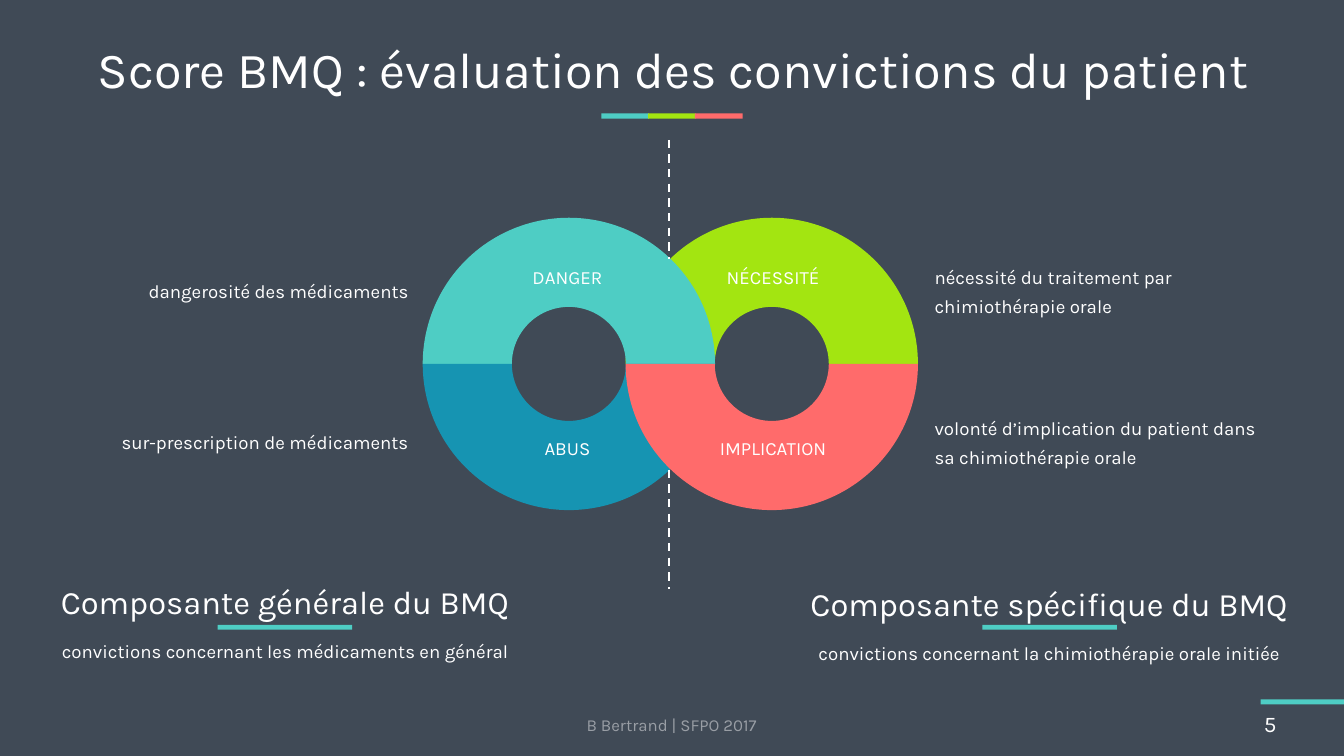
import pptx
import pptx.dml.color
import pptx.enum.dml
import pptx.enum.shapes
import pptx.enum.text
import pptx.oxml.ns
import pptx.util
from lxml import etree

Pt = pptx.util.Pt
SHAPES = pptx.enum.shapes.MSO_SHAPE
ALIGN = pptx.enum.text.PP_ALIGN
ANCHOR = pptx.enum.text.MSO_ANCHOR

FONT = "Karla"
COLORS = {
    "background": "404A56",
    "white": "FFFFFF",
    "grey": "999EA5",
    "teal": "4ECDC4",
    "lime": "A3E511",
    "coral": "FF6B6B",
    "blue": "1694B2",
}
RING_SIZE = 313.2
RING_TOP = 233.3
RING_LEFTS = (452.9, 670.3)


def rgb(color):
    return pptx.dml.color.RGBColor.from_string(COLORS[color])


def add_filled(slide, preset, left, top, width, height, color):
    shape = slide.shapes.add_shape(preset, Pt(left), Pt(top), Pt(width), Pt(height))
    shape.shadow.inherit = False
    shape.fill.solid()
    shape.fill.fore_color.rgb = rgb(color)
    shape.line.fill.background()
    return shape


def add_bar(slide, left, top, width, color="teal", height=5.4):
    add_filled(slide, SHAPES.RECTANGLE, left, top, width, height, color)


def add_half_ring(slide, left, color, rotation):
    half_ring = add_filled(slide, SHAPES.BLOCK_ARC, left, RING_TOP,
                           RING_SIZE, RING_SIZE, color)
    for index, value in enumerate((108, 0, 0.305)):
        half_ring.adjustments[index] = value
    half_ring.rotation = rotation


def add_text(slide, left, top, width, height, lines, align=ALIGN.LEFT,
             anchor=ANCHOR.MIDDLE, spacing=1.0, color="white", gap=0):
    box = slide.shapes.add_textbox(Pt(left), Pt(top), Pt(width), Pt(height))
    frame = box.text_frame
    frame.word_wrap = True
    frame.vertical_anchor = anchor
    for index, (words, size) in enumerate(lines):
        paragraph = frame.add_paragraph() if index else frame.paragraphs[0]
        paragraph.alignment = align
        paragraph.line_spacing = spacing
        paragraph.space_after = Pt(gap if index < len(lines) - 1 else 0)
        run = paragraph.add_run()
        run.text = words
        run.font.name = FONT
        run.font.size = Pt(size)
        run.font.color.rgb = rgb(color)


def add_divider(slide, x, top, bottom):
    divider = slide.shapes.add_connector(
        pptx.enum.shapes.MSO_CONNECTOR.STRAIGHT, Pt(x), Pt(top), Pt(x), Pt(bottom))
    divider.line.color.rgb = rgb("white")
    divider.line.width = Pt(2.25)
    divider.line.dash_style = pptx.enum.dml.MSO_LINE.DASH
    properties = divider.element.find(pptx.oxml.ns.qn("p:spPr"))
    etree.SubElement(properties, pptx.oxml.ns.qn("a:effectLst"))


def add_header_and_footer(slide):
    for index, color in enumerate(("teal", "lime", "coral")):
        add_bar(slide, 644.2 + index * 50.2, 121.6, 51, color)
    add_bar(slide, 1350.8, 749.3, 89.2)
    add_text(slide, 38.9, 27.4, 1365.1, 100.8,
             [("Score BMQ : évaluation des convictions du patient", 54)],
             ALIGN.CENTER, spacing=0.9)
    add_text(slide, 476.6, 754.6, 486, 43.2, [("B Bertrand | SFPO 2017", 18)],
             ALIGN.CENTER, color="grey")
    add_text(slide, 1347.1, 756, 92.9, 38.2, [("5", 24)])


def add_rings(slide):
    general, specific = RING_LEFTS
    for left, color, rotation in (
        (specific, "lime", 0),
        (general, "teal", 0),
        (general, "blue", 180),
        (specific, "coral", 180),
    ):
        add_half_ring(slide, left, color, rotation)

    for left, top, label in (
        (511.9, 271.4, "DANGER"),
        (732.2, 271.4, "NÉCESSITÉ"),
        (732.2, 454.3, "IMPLICATION"),
        (511.9, 455, "ABUS"),
    ):
        add_text(slide, left, top, 192.2, 41, [(label, 20)],
                 ALIGN.CENTER, ANCHOR.BOTTOM)


def add_explanations(slide):
    for left, align, explanations in (
        (82.1, ALIGN.RIGHT, ("dangerosité des médicaments",
                             "sur-prescription de médicaments")),
        (994.3, ALIGN.LEFT, ("nécessité du traitement par chimiothérapie orale",
                             "volonté d’implication du patient dans sa chimiothérapie orale")),
    ):
        for row, explanation in enumerate(explanations):
            add_text(slide, left, 233 + row * 161.5, 362.9, 151.2,
                     [(explanation, 20)], align, spacing=1.3)


def add_components(slide):
    for left, top, bar_left, heading, detail in (
        (30.2, 584.6, 233.3, "Composante générale du BMQ",
         "convictions concernant les médicaments en général"),
        (848.9, 586.8, 1052.6, "Composante spécifique du BMQ",
         "convictions concernant la chimiothérapie orale initiée"),
    ):
        add_text(slide, left, top, 550.8, 151.2, [(heading, 35), (detail, 20)],
                 ALIGN.CENTER, spacing=1.3, gap=12)
        add_bar(slide, bar_left, 669.6, 144, height=5)


def main():
    presentation = pptx.Presentation()
    presentation.slide_width = Pt(1440)
    presentation.slide_height = Pt(810)
    slide = presentation.slides.add_slide(presentation.slide_layouts[6])
    slide.background.fill.solid()
    slide.background.fill.fore_color.rgb = rgb("background")

    add_header_and_footer(slide)
    add_rings(slide)
    add_explanations(slide)
    add_components(slide)
    for top, bottom in ((149.8, 277.9), (503.3, 630.7)):
        add_divider(slide, 717.1, top, bottom)

    presentation.save("out.pptx")


if __name__ == "__main__":
    main()
